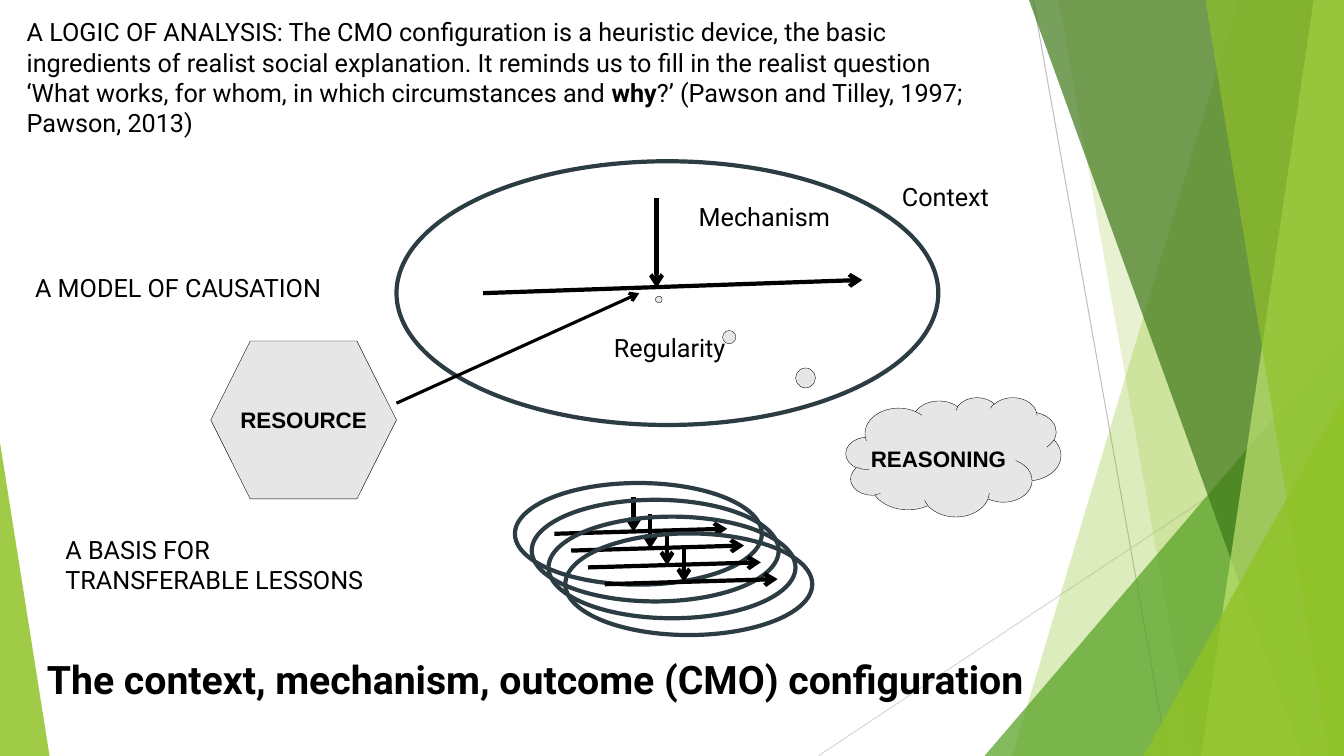
from dataclasses import dataclass

from lxml.etree import SubElement
from pptx import Presentation
from pptx.dml.color import RGBColor
from pptx.enum.shapes import MSO_CONNECTOR, MSO_SHAPE as Geo
from pptx.enum.text import MSO_ANCHOR, PP_ALIGN
from pptx.oxml.ns import qn
from pptx.util import Inches, Pt

COLS, ROWS = 160, 90
CELL = Inches(1 / 12)
BLACK, SLATE, GREY, GREEN = "000000", "2C3C43", "E6E6E6", "90C226"
BODY = {"name": "Roboto", "size": Pt(18), "bold": False}
TITLE = {"name": "Roboto", "size": Pt(28), "bold": True}
TAG = {"name": "Arial", "size": Pt(16), "bold": True}


@dataclass
class Box:
    """A place on the grid, in columns and rows."""
    left: float
    top: float
    width: float
    height: float

    def emu(self) -> list[int]:
        return [cells(v) for v in (self.left, self.top, self.width, self.height)]

    def at(self, x: float, y: float) -> tuple[float, float]:
        """Grid point lying at the given shares of the box."""
        return self.left + x * self.width, self.top + y * self.height


@dataclass
class Band:
    """A full-height facet, slanted on the left and flush with the right edge."""
    top_col: float
    foot_col: float
    color: str
    opacity: int


@dataclass
class Wedge:
    """A triangle on the bottom edge; apex is 0 for left, 1 for right."""
    box: Box
    apex: int
    color: str
    opacity: int


@dataclass
class Label:
    box: Box
    runs: list[tuple[str, bool]]
    font: dict


FACETS = [
    Band(147.4, 120.5, GREEN, 30),
    Band(126, 142, GREEN, 20),
    Wedge(Box(117.2, 40, 42.8, 50), 1, "54A021", 72),
    Band(122.5, 155, "3F7819", 70),
    Band(156.4, 143, "C0E474", 70),
    Band(143.5, 158.2, GREEN, 65),
    Wedge(Box(136.1, 47.1, 23.9, 42.9), 1, GREEN, 80),
    Wedge(Box(0, 52.7, 5.9, 37.3), 0, GREEN, 85),
]

LABELS = [
    Label(Box(4.4, 77.4, 129.2, 6.8),
          [("The context, mechanism, outcome (CMO) configuration", True)], TITLE),
    Label(Box(3, 31.8, 38.2, 4.8), [("A MODEL OF CAUSATION", False)], BODY),
    Label(Box(82, 23.4, 24.4, 4.8), [("Mechanism", False)], BODY),
    Label(Box(71.9, 39, 24.1, 4.9), [("Regularity", False)], BODY),
    Label(Box(106.2, 21, 22.6, 4.8), [("Context", False)], BODY),
    Label(Box(2, 1.4, 117.7, 19.4), [
        ("A LOGIC OF ANALYSIS: The CMO configuration is a heuristic device, the basic "
         "ingredients of realist social explanation. It reminds us to fill in the realist "
         "question ‘What works, for whom, in which circumstances and ", False),
        ("why", True),
        ("?’ (Pawson and Tilley, 1997; Pawson, 2013)", False)], BODY),
    Label(Box(6.6, 63, 38.8, 12.1), [("A BASIS FOR TRANSFERABLE LESSONS", False)], BODY),
    Label(Box(102.5, 52.4, 20.9, 8), [("REASONING", True)], TAG),
]


def cells(n: float) -> int:
    return round(n * CELL)


def rgb(color: str) -> RGBColor:
    return RGBColor.from_string(color)


def paint(s, fill: str = "", line: str = "", weight: float = 0, opacity: int = 100) -> None:
    s.shadow.inherit = False
    if fill:
        s.fill.solid()
        s.fill.fore_color.rgb = rgb(fill)
        if opacity < 100:
            clr = s._element.spPr.find(qn("a:solidFill"))[0]
            SubElement(clr, qn("a:alpha"), val=str(opacity * 1000))
    else:
        s.fill.background()
    if line:
        s.line.color.rgb = rgb(line)
        s.line.width = Pt(weight)
    else:
        s.line.fill.background()


def add_line(shapes, start: tuple, end: tuple, color: str, weight: float,
             arrow: bool = True) -> None:
    s = shapes.add_connector(MSO_CONNECTOR.STRAIGHT, *[cells(v) for v in (*start, *end)])
    s.line.color.rgb = rgb(color)
    s.line.width = Pt(weight)
    if arrow:
        SubElement(s.line._get_or_add_ln(), qn("a:tailEnd"), type="arrow")
    SubElement(s._element.spPr, qn("a:effectLst"))


def add_shape(shapes, geo, box: Box, adjustments: tuple = (), **look):
    s = shapes.add_shape(geo, *box.emu())
    for i, value in enumerate(adjustments):
        s.adjustments[i] = value
    paint(s, **look)
    return s


def add_facet(shapes, facet: Band | Wedge) -> None:
    if isinstance(facet, Wedge):
        add_shape(shapes, Geo.ISOSCELES_TRIANGLE, facet.box, (facet.apex,),
                  fill=facet.color, opacity=facet.opacity)
        return
    outline = [(cells(x), cells(y)) for x, y in (
        (facet.top_col, 0), (COLS, 0), (COLS, ROWS), (facet.foot_col, ROWS))]
    builder = shapes.build_freeform(*outline[0])
    builder.add_line_segments(outline[1:], close=True)
    paint(builder.convert_to_shape(), facet.color, opacity=facet.opacity)


def write(p, text: str, font: dict) -> None:
    r = p.add_run()
    r.text = text
    for name, value in font.items():
        setattr(r.font, name, value)
    r.font.color.rgb = rgb(BLACK)


def add_label(shapes, label: Label) -> None:
    tf = shapes.add_textbox(*label.box.emu()).text_frame
    tf.word_wrap = True
    for text, bold in label.runs:
        write(tf.paragraphs[0], text, {**label.font, "bold": bold})


def add_cause(shapes, box: Box) -> None:
    """A context ellipse holding a regularity arrow and a mechanism arrow."""
    add_shape(shapes, Geo.OVAL, box, line=SLATE, weight=3)
    add_line(shapes, box.at(0.16, 0.5), box.at(0.86, 0.45), BLACK, 3)
    add_line(shapes, box.at(0.48, 0.14), box.at(0.48, 0.48), BLACK, 3)


def add_resource(shapes) -> None:
    s = add_shape(shapes, Geo.HEXAGON, Box(25.1, 40.6, 22.1, 18.8),
                  fill=GREY, line=BLACK, weight=0.25)
    tf = s.text_frame
    for side in ("left", "top", "right", "bottom"):
        setattr(tf, f"margin_{side}", 0)
    tf.vertical_anchor = MSO_ANCHOR.MIDDLE
    tf.paragraphs[0].alignment = PP_ALIGN.CENTER
    write(tf.paragraphs[0], "RESOURCE", TAG)
    add_line(shapes, (47.2, 48), (76.1, 34.9), BLACK, 2.25)


def main() -> None:
    prs = Presentation()
    prs.slide_width, prs.slide_height = cells(COLS), cells(ROWS)
    shapes = prs.slides.add_slide(prs.slide_layouts[6]).shapes

    add_line(shapes, (123, 0), (139, ROWS), "BFBFBF", 0.75, arrow=False)
    add_line(shapes, (COLS, 48.4), (97.4, ROWS), "D9D9D9", 0.75, arrow=False)
    for facet in FACETS:
        add_facet(shapes, facet)

    add_cause(shapes, Box(47.2, 19.2, 64.5, 31.4))
    for i in range(4):
        add_cause(shapes, Box(61.3 + 2 * i, 57.5 + 2 * i, 29.4, 12.1))

    add_resource(shapes)
    add_shape(shapes, Geo.CLOUD_CALLOUT, Box(100.7, 47.3, 25.6, 14.2), (-1.37, -1.32),
              fill=GREY, line=BLACK, weight=0.25)
    for label in LABELS:
        add_label(shapes, label)

    prs.save("out.pptx")


if __name__ == "__main__":
    main()
